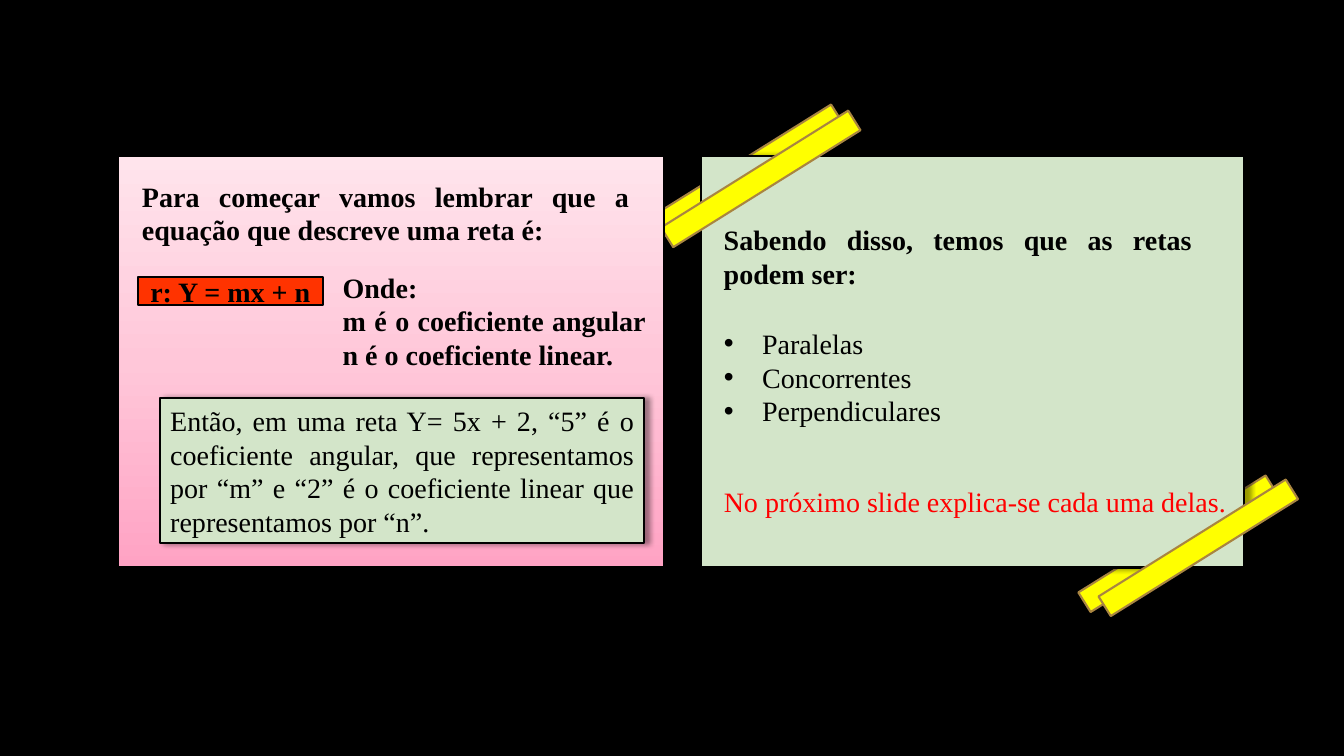
from lxml import etree
from pptx import Presentation
from pptx.dml.color import RGBColor
from pptx.enum.shapes import MSO_SHAPE as Geo
from pptx.enum.text import MSO_ANCHOR as Anchor, MSO_AUTO_SIZE as Fit, PP_ALIGN as Align
from pptx.oxml import parse_xml
from pptx.oxml.ns import qn
from pptx.util import Inches, Pt

NS = 'xmlns:a="http://schemas.openxmlformats.org/drawingml/2006/main"'
BLACK, RED, GREEN, YELLOW = "000000", "FF0000", "D3E5C9", "FFFF00"


def color(code):
    return RGBColor.from_string(code)


class Deck:
    """Holds the text style and the slide on which the cards are drawn."""

    font = "Times New Roman"
    size = Pt(20)

    def __init__(self):
        self.prs = Presentation()
        self.prs.slide_width = Inches(13.33)
        self.prs.slide_height = Inches(7.5)
        self.slide = self.prs.slides.add_slide(self.prs.slide_layouts[6])
        back = self.slide.background.fill
        back.solid()
        back.fore_color.rgb = color(BLACK)
        self.root = self.slide.shapes

    def group(self):
        self.root = self.slide.shapes.add_group_shape().shapes

    def ungroup(self):
        self.root = self.slide.shapes

    def rect(self, box, fill, line=BLACK, shadow=False):
        shape = self.root.add_shape(Geo.RECTANGLE, *map(Inches, box))
        shape.shadow.inherit = False
        shape.fill.solid()
        shape.fill.fore_color.rgb = color(fill)
        shape.line.color.rgb = color(line)
        shape.line.width = Pt(1.5)
        if shadow:
            effects = shape._element.spPr.find(qn("a:effectLst"))
            effects.append(parse_xml(
                f'<a:outerShdw {NS} blurRad="{Pt(4)}" dist="{Pt(3)}" dir="0" algn="l" rotWithShape="0">'
                f'<a:srgbClr val="{BLACK}"><a:alpha val="40000"/></a:srgbClr></a:outerShdw>'))
        return shape

    def tape(self, left, top):
        strip = self.rect((left, top, 2.19, 0.23), YELLOW, "A98541")
        strip.rotation = 328

    def blend(self, shape, codes):
        shape.fill.gradient()
        shape.fill.gradient_angle = 90
        stops = shape._element.spPr.find(qn("a:gradFill")).find(qn("a:gsLst"))
        for stop in list(stops):
            stops.remove(stop)
        for i, code in enumerate(codes):
            stop = etree.SubElement(stops, qn("a:gs"), pos=str(i * 100000 // (len(codes) - 1)))
            etree.SubElement(stop, qn("a:srgbClr"), val=code)

    def fill_text(self, shape, lines, align=Align.JUSTIFY, bold=False, ink=BLACK, dots=False):
        frame = shape.text_frame
        frame.word_wrap = True
        for i, line in enumerate(lines):
            para = frame.paragraphs[0] if i == 0 else frame.add_paragraph()
            para.alignment = align
            if dots:
                props = para._p.get_or_add_pPr()
                props.set("marL", str(Inches(0.38)))
                props.set("indent", str(Inches(-0.38)))
                etree.SubElement(props, qn("a:buFont"), typeface="Arial")
                etree.SubElement(props, qn("a:buChar"), char="•")
            run = para.add_run()
            run.text = line
            run.font.name = self.font
            run.font.size = self.size
            run.font.bold = bold
            run.font.color.rgb = color(ink)

    def label(self, box, lines, **style):
        shape = self.root.add_textbox(*map(Inches, box))
        self.fill_text(shape, lines, **style)
        shape.text_frame.auto_size = Fit.SHAPE_TO_FIT_TEXT

    def panel(self, box, fill, text, shadow=False, **style):
        shape = self.rect(box, fill, shadow=shadow)
        shape.text_frame.vertical_anchor = Anchor.MIDDLE
        self.fill_text(shape, [text], **style)


def main():
    deck = Deck()

    deck.group()
    deck.tape(6.28, 1.6)
    deck.tape(10.59, 5.28)
    deck.rect((6.95, 1.55, 5.39, 4.08), GREEN, shadow=True)
    deck.tape(6.45, 1.66)
    deck.tape(10.79, 5.32)

    deck.group()
    card = deck.rect((1.17, 1.55, 5.42, 4.08), "FFC7D9")
    deck.blend(card, ["FFA3C4", "FFC7D9", "FFE4EC"])
    deck.panel((1.37, 2.75, 1.83, 0.28), "FF3300", "r: Y = mx + n",
               align=Align.CENTER, bold=True)
    deck.label((1.31, 1.73, 5.03, 0.77),
               ["Para começar vamos lembrar que a equação que descreve uma reta é:"], bold=True)
    deck.label((3.3, 2.63, 3.2, 1.11),
               ["Onde:", "m é o coeficiente angular ", "n é o coeficiente linear."], bold=True)
    deck.panel((1.59, 3.95, 4.8, 1.44), GREEN,
               "Então, em uma reta Y= 5x + 2, “5” é o coeficiente angular, que representamos "
               "por “m” e “2” é o coeficiente linear que representamos por “n”.", shadow=True)

    deck.ungroup()
    deck.label((7.08, 2.16, 4.84, 0.77),
               ["Sabendo disso, temos que as retas podem ser:"], bold=True)
    deck.label((7.08, 3.19, 4.72, 1.11),
               ["Paralelas", "Concorrentes", "Perpendiculares"], align=Align.LEFT, dots=True)
    deck.label((7.08, 4.76, 5.32, 0.44),
               ["No próximo slide explica-se cada uma delas."], align=Align.LEFT, ink=RED)

    deck.prs.save("out.pptx")


if __name__ == "__main__":
    main()
